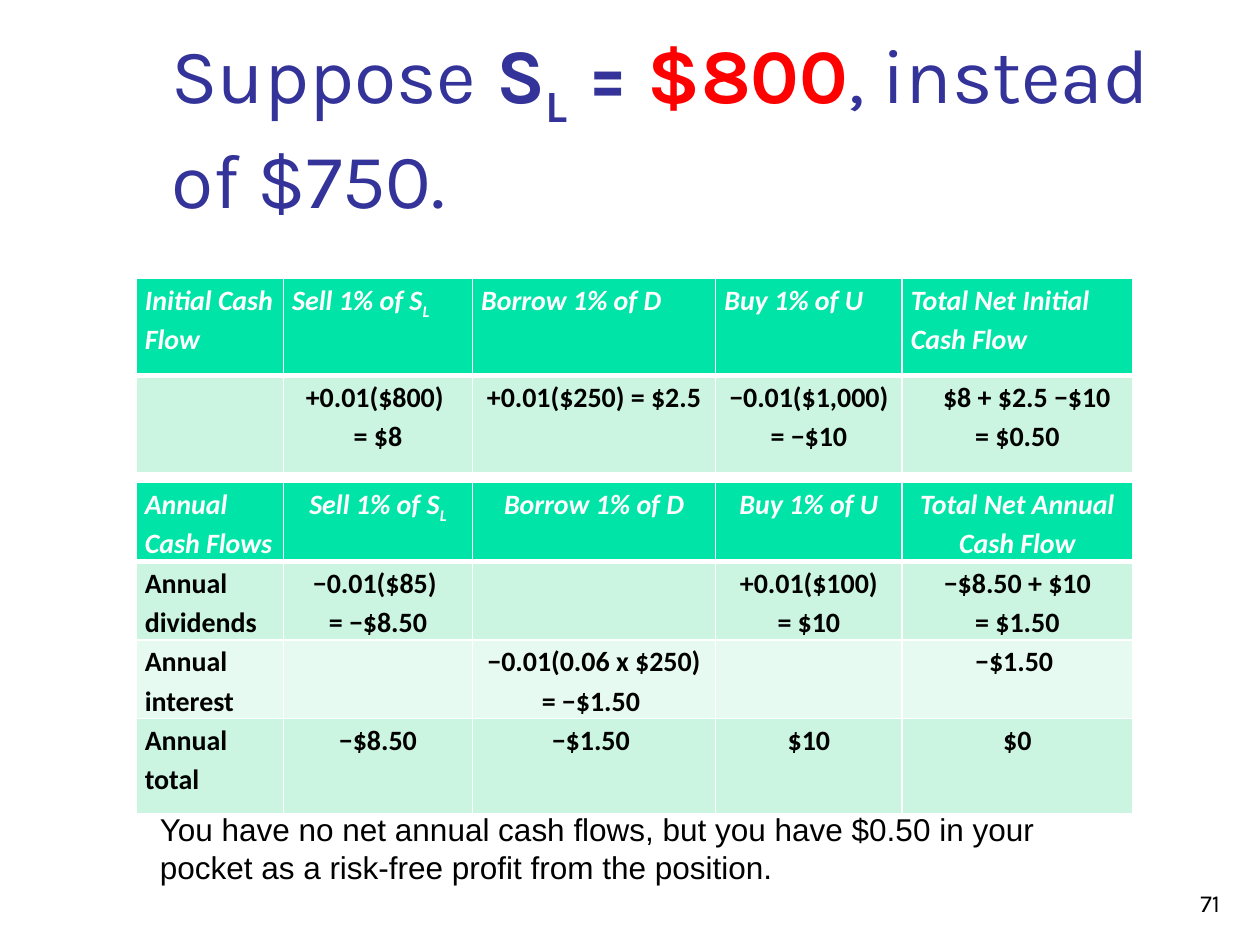
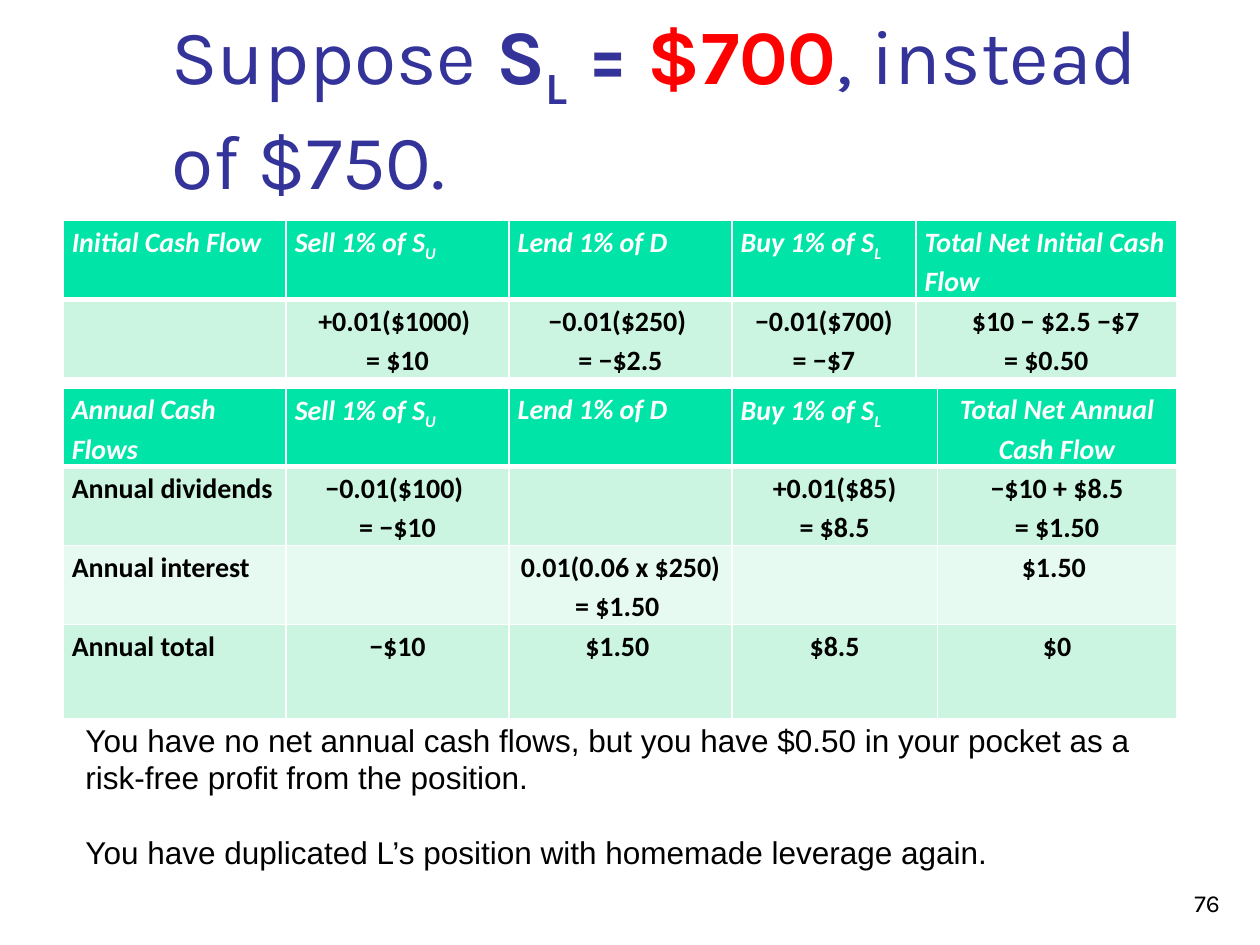
from lxml import etree
from pptx import Presentation
from pptx.dml.color import RGBColor
from pptx.enum.text import MSO_ANCHOR, MSO_AUTO_SIZE, PP_ALIGN
from pptx.oxml.ns import qn
from pptx.util import Inches, Pt

LEFT, CENTER, RIGHT = PP_ALIGN.LEFT, PP_ALIGN.CENTER, PP_ALIGN.RIGHT
BOTTOM = MSO_ANCHOR.BOTTOM
NO_AUTOFIT = MSO_AUTO_SIZE.NONE

hue = RGBColor.from_string
TITLE_BLUE, RED, BLACK, WHITE = "333399", "FF0000", "000000", "FFFFFF"
HEADER_GREEN, BODY_GREENS = "00E4A8", ("E7FAF1", "CBF5E1")

prs = Presentation()
prs.slide_width, prs.slide_height = Inches(10), Inches(7.5)
COL, ROW = prs.slide_width / 100, prs.slide_height / 75


def grid(left, top, width, height):
    return int(left * COL), int(top * ROW), int(width * COL), int(height * ROW)


def add_run(paragraph, text, font, size, color, bold=False, italic=False, subscript=False):
    run = paragraph.add_run()
    run.text = text
    run.font.name, run.font.size = font, Pt(size)
    run.font.color.rgb = hue(color)
    run.font.bold, run.font.italic = bold, italic
    if subscript:
        run.font._element.set("baseline", "-25000")


PROFIT = ("You have no net annual cash flows, but you have $0.50 in your pocket "
          "as a risk-free profit from the position.")

scenarios = [
    {
        "price": "$800", "title_top": 2.3, "number": "71",
        "note_at": (11.7, 63.8, 73.3, 7.1), "notes": [PROFIT],
        "tables": [
            {"at": (10.8, 22.1), "columns": (11.7, 15, 19.3, 14.8, 18.3), "rows": (7.7, 7.7),
             "centred_headers": (),
             "cells": [
                 ["Initial Cash Flow", "Sell 1% of S_L", "Borrow 1% of D", "Buy 1% of U",
                  "Total Net Initial Cash Flow"],
                 ["", "+0.01($800) \n= $8", "+0.01($250) = $2.5", "−0.01($1,000)\n= −$10",
                  "\t$8 + $2.5 −$10\n= $0.50"]]},
            {"at": (10.8, 38.3), "columns": (11.7, 15, 19.3, 14.8, 18.3),
             "rows": (6.2, 6.2, 6.2, 7.5), "centred_headers": (1, 2, 3, 4),
             "cells": [
                 ["Annual Cash Flows", "Sell 1% of S_L", "Borrow 1% of D", "Buy 1% of U",
                  "Total Net Annual Cash Flow"],
                 ["Annual dividends", "−0.01($85) \n= −$8.50", "", "+0.01($100)\n= $10",
                  " −$8.50 + $10 \n= $1.50"],
                 ["Annual interest", "", "−0.01(0.06 x $250)\n= −$1.50 ", "", "−$1.50 "],
                 ["Annual total", "−$8.50", "−$1.50 ", "$10", "$0"]]},
        ],
    },
    {
        "price": "$700", "title_top": 0.8, "number": "76",
        "note_at": (5.8, 56.7, 86.7, 13.1),
        "notes": [PROFIT, "You have duplicated L’s position with homemade leverage again."],
        "tables": [
            {"at": (5, 17.5), "columns": (17.7, 17.7, 17.7, 14.6, 20.7), "rows": (6.2, 6.2),
             "centred_headers": (),
             "cells": [
                 ["Initial Cash Flow", "Sell 1% of S_U", "Lend 1% of D", "Buy 1% of S_L",
                  "Total Net Initial Cash Flow"],
                 ["", "+0.01($1000) \n= $10", "−0.01($250) \n= −$2.5", "−0.01($700)\n= −$7",
                  "\t$10 − $2.5 −$7\n= $0.50"]]},
            {"at": (5, 30.8), "columns": (17.7, 17.7, 17.7, 16.3, 19),
             "rows": (6.2, 6.2, 6.2, 7.5), "centred_headers": (4,),
             "cells": [
                 ["Annual Cash Flows", "Sell 1% of S_U", "Lend 1% of D", "Buy 1% of S_L",
                  "Total Net Annual Cash Flow"],
                 ["Annual dividends", "−0.01($100) \n= −$10", "", "+0.01($85)\n= $8.5",
                  " −$10 + $8.5 \n= $1.50"],
                 ["Annual interest", "", "0.01(0.06 x $250)\n= $1.50 ", "", "$1.50 "],
                 ["Annual total", "−$10", "$1.50 ", "$8.5", "$0"]]},
        ],
    },
]

for scenario in scenarios:
    slide = prs.slides.add_slide(prs.slide_layouts[5])

    title = slide.shapes.title
    title.left, title.top, title.width, title.height = grid(12.6, scenario["title_top"], 85.2, 16)
    title.text_frame.auto_size = NO_AUTOFIT
    title.text_frame.vertical_anchor = BOTTOM
    heading = title.text_frame.paragraphs[0]
    heading.alignment = LEFT
    for text, color, bold, subscript in [
        ("Suppose", TITLE_BLUE, False, False),
        (" S", TITLE_BLUE, True, False),
        ("L", TITLE_BLUE, True, True),
        (" = ", TITLE_BLUE, True, False),
        (scenario["price"], RED, True, False),
        (", instead of $750.", TITLE_BLUE, False, False),
    ]:
        add_run(heading, text, "Karla", 44, color, bold, subscript=subscript)

    for flows in scenario["tables"]:
        cells, columns, rows = flows["cells"], flows["columns"], flows["rows"]
        table = slide.shapes.add_table(
            len(rows), len(columns), *grid(*flows["at"], sum(columns), sum(rows))).table
        for column, width in zip(table.columns, columns):
            column.width = int(width * COL)
        for row, height in zip(table.rows, rows):
            row.height = int(height * ROW)

        for r, row_texts in enumerate(cells):
            for c, entry in enumerate(row_texts):
                cell = table.cell(r, c)
                cell.margin_left = cell.margin_right = Inches(0.07)
                cell.margin_top = cell.margin_bottom = 0

                thick_side = {0: "lnB", 1: "lnT"}.get(r)
                for side in ("lnL", "lnR", "lnT", "lnB"):
                    border = etree.SubElement(cell._tc.get_or_add_tcPr(), qn(f"a:{side}"))
                    border.set("w", str(Pt(3 if side == thick_side else 1)))
                    line_fill = etree.SubElement(border, qn("a:solidFill"))
                    etree.SubElement(line_fill, qn("a:srgbClr")).set("val", WHITE)
                cell.fill.solid()
                cell.fill.fore_color.rgb = hue(BODY_GREENS[r % 2] if r else HEADER_GREEN)

                is_header = r == 0
                centred = c in flows["centred_headers"] if is_header else c > 0
                for i, line in enumerate(entry.split("\n") if entry else []):
                    frame = cell.text_frame
                    paragraph = frame.add_paragraph() if i else frame.paragraphs[0]
                    paragraph.alignment = CENTER if centred else LEFT
                    paragraph.line_spacing = 1.15
                    if line.startswith("\t"):
                        paragraph._p.get_or_add_pPr().set("marL", str(Inches(0.15)))
                    base, _, index = line.lstrip("\t").partition("_")
                    style = ("Calibri", 16, WHITE if is_header else BLACK, True, is_header)
                    add_run(paragraph, base, *style)
                    if index:
                        add_run(paragraph, index, *style, subscript=True)

    conclusion = slide.shapes.add_textbox(*grid(*scenario["note_at"])).text_frame
    conclusion.word_wrap = True
    for i, note in enumerate(scenario["notes"]):
        paragraph = conclusion.add_paragraph() if i else conclusion.paragraphs[0]
        paragraph.space_before = Pt(21 if i else 0)
        add_run(paragraph, note, "Arial", 18, BLACK)

    page = slide.shapes.add_textbox(*grid(77, 68.3, 20.8, 5)).text_frame
    page.word_wrap = True
    page.vertical_anchor = BOTTOM
    page.paragraphs[0].alignment = RIGHT
    add_run(page.paragraphs[0], scenario["number"], "Karla", 14, BLACK)

prs.save("out.pptx")
